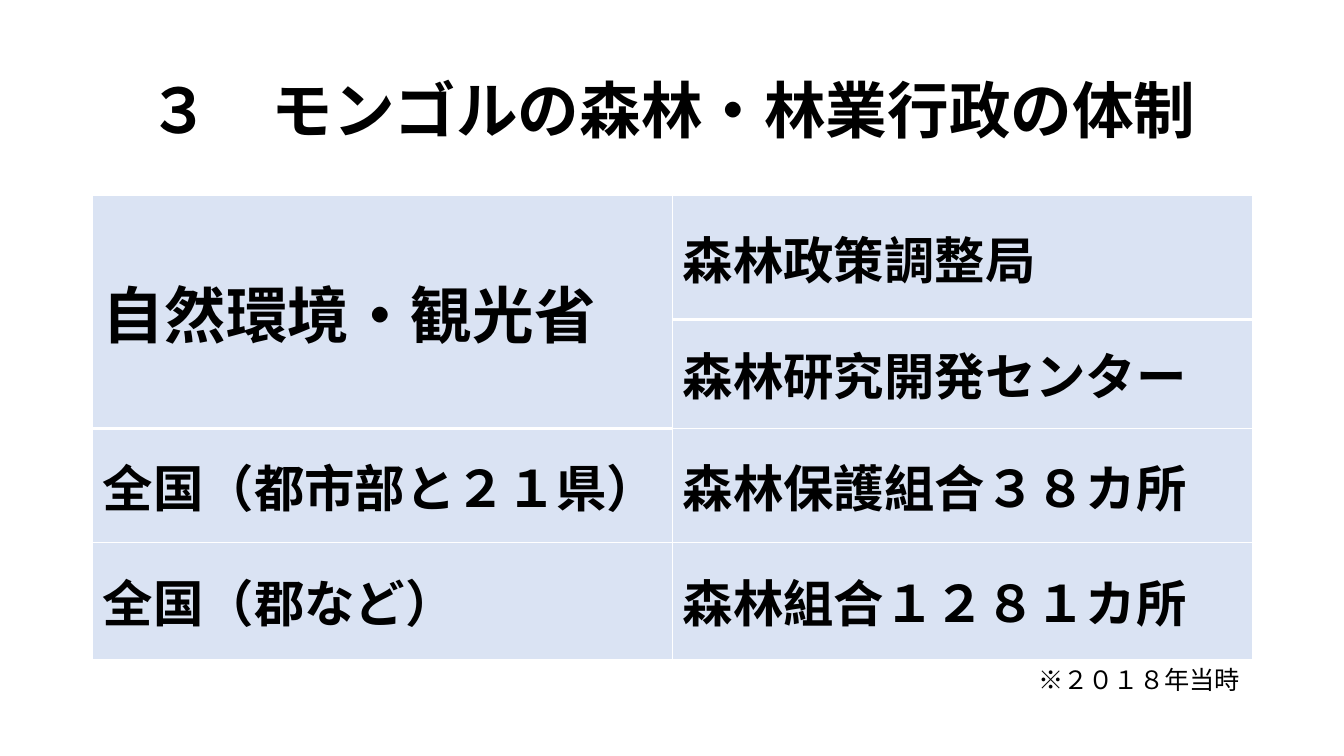
from lxml.etree import SubElement
from pptx import Presentation
from pptx.dml.color import RGBColor
from pptx.enum.text import MSO_ANCHOR, MSO_AUTO_SIZE, PP_ALIGN
from pptx.oxml.ns import qn
from pptx.util import Inches, Pt

FONT = "Noto Sans CJK JP"
BLACK = RGBColor(0x00, 0x00, 0x00)
WHITE = RGBColor(0xFF, 0xFF, 0xFF)
PALE_BLUE = RGBColor(0xDA, 0xE3, 0xF3)

ROW_HEIGHTS = [1.23, 1.08, 1.13, 1.16]
ROWS = [
    ("自然環境・観光省", "森林政策調整局"),
    ("", "森林研究開発センター"),
    ("全国（都市部と２１県）", "森林保護組合３８カ所"),
    ("全国（郡など）", "森林組合１２８１カ所"),
]


def write_text(text_frame, text, size, bold=True):
    """Set one paragraph of black text and return it."""
    text_frame.text = text
    paragraph = text_frame.paragraphs[0]
    for run in paragraph.runs:
        font = run.font
        font.size, font.bold = Pt(size), bold
        font.color.rgb = BLACK
        font.name = FONT
        SubElement(font._element, qn("a:ea"), typeface=FONT)
    return paragraph


def set_borders(cell, bottom):
    """Draw white borders round a cell, with the given bottom width in points."""
    properties = cell._tc.get_or_add_tcPr()
    widths = {"a:lnL": 1, "a:lnR": 1, "a:lnT": 1, "a:lnB": bottom}
    for position, (tag, width) in enumerate(widths.items()):
        line = SubElement(properties, qn(tag), w=str(Pt(width)))
        fill = SubElement(line, qn("a:solidFill"))
        SubElement(fill, qn("a:srgbClr"), val=str(WHITE))
        properties.insert(position, line)


def add_title(slide, left, top, width, height):
    """Add the centred slide title."""
    shape = slide.shapes.add_textbox(left, top, width, height)
    text_frame = shape.text_frame
    text_frame.word_wrap = True
    text_frame.vertical_anchor = MSO_ANCHOR.MIDDLE
    paragraph = write_text(text_frame, "３　モンゴルの森林・林業行政の体制", 44)
    paragraph.alignment = PP_ALIGN.CENTER
    paragraph.line_spacing = 0.9


def add_administration_table(slide, left, top, width, height):
    """Add the table of forestry bodies, with the ministry spanning two rows."""
    frame = slide.shapes.add_table(len(ROWS), 2, left, top, width, height)
    table = frame.table
    table.first_row = table.horz_banding = False
    for column in table.columns:
        column.width = width // 2
    for row, row_height in zip(table.rows, ROW_HEIGHTS):
        row.height = Inches(row_height)
    table.cell(0, 0).merge(table.cell(1, 0))
    for row_index, texts in enumerate(ROWS):
        for column_index, text in enumerate(texts):
            cell = table.cell(row_index, column_index)
            cell.fill.solid()
            cell.fill.fore_color.rgb = PALE_BLUE
            cell.vertical_anchor = MSO_ANCHOR.MIDDLE
            is_ministry = column_index == 0 and row_index < 2
            set_borders(cell, 3 if is_ministry or row_index == 0 else 1)
            if text:
                write_text(cell.text_frame, text, 44 if is_ministry else 36)


def add_date_note(slide, left, top, width, height):
    """Add the note giving the year of the figures."""
    shape = slide.shapes.add_textbox(left, top, width, height)
    text_frame = shape.text_frame
    text_frame.word_wrap = False
    text_frame.auto_size = MSO_AUTO_SIZE.SHAPE_TO_FIT_TEXT
    write_text(text_frame, "※２０１８年当時", 18, bold=False)


def main():
    """Build the slide and save it."""
    presentation = Presentation()
    presentation.slide_width = Inches(13.33)
    presentation.slide_height = Inches(7.5)
    slide = presentation.slides.add_slide(presentation.slide_layouts[6])
    left, width = Inches(0.92), Inches(11.5)
    table_top, table_height = Inches(1.94), Inches(sum(ROW_HEIGHTS))
    note_width = Inches(2.22)
    add_title(slide, left, Inches(0.4), width, Inches(1.45))
    add_administration_table(slide, left, table_top, width, table_height)
    add_date_note(slide, left + width - note_width, table_top + table_height,
                  note_width, Inches(0.4))
    presentation.save("out.pptx")


if __name__ == "__main__":
    main()
